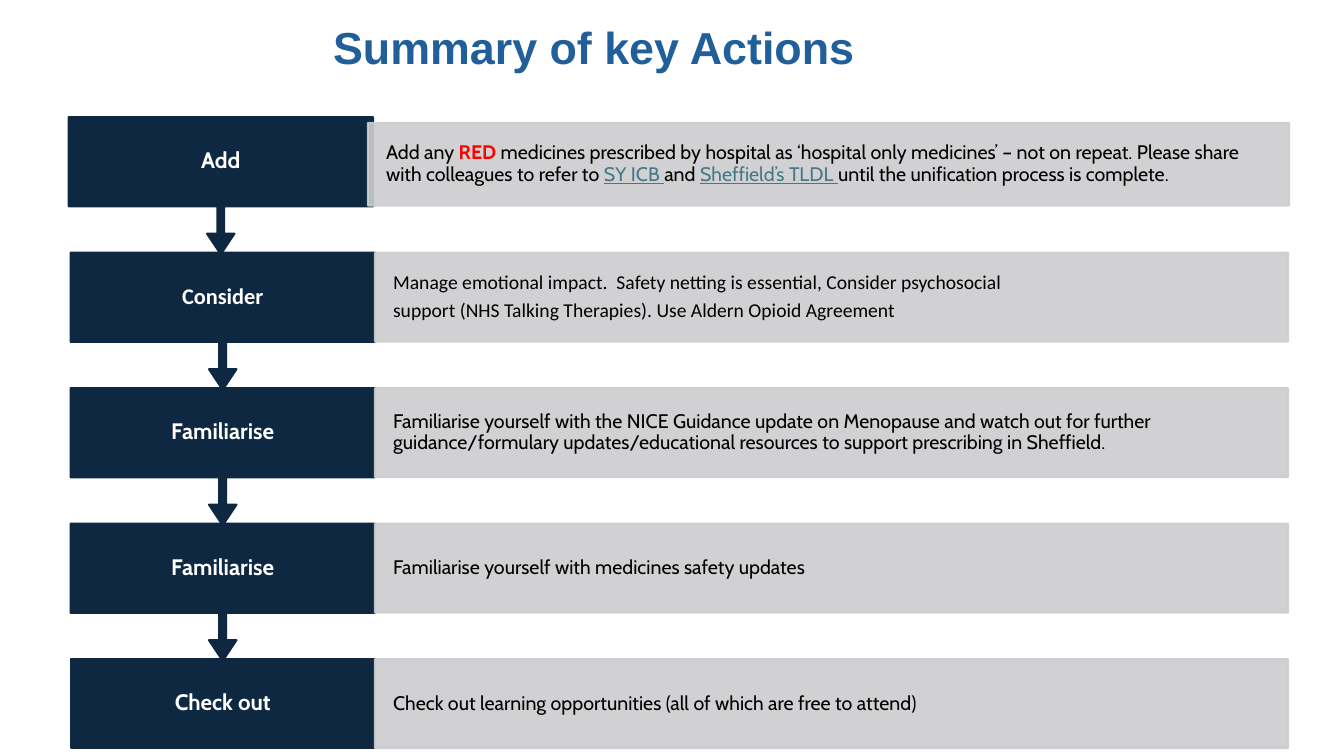
from lxml.etree import SubElement
from pptx import Presentation
from pptx.dml.color import RGBColor
from pptx.enum.shapes import MSO_SHAPE
from pptx.enum.text import MSO_ANCHOR, PP_ALIGN
from pptx.oxml.ns import qn
from pptx.util import Pt

COLORS = {"navy": "0E2841", "grey": "CCCDCF", "white": "FFFFFF", "black": "000000",
          "red": "FF0000", "link": "467886", "title": "215F9A"}

# Row geometry
TOP, PITCH, ROW_H, CALLOUT_H = 83.7, 96.8, 63.4, 97.9
LABEL_X, LABEL_W, BODY_X, BODY_W = 50.4, 217.4, 267.8, 652.3

# Label, font, paragraphs made of (text, style) runs
ACTIONS = [
    ("Add", "Cabin", [[
        ("Add any ", None), ("RED ", "alert"),
        ("medicines prescribed by hospital as ‘hospital only medicines’ – not on repeat. "
         "Please share with colleagues to refer to ", None),
        ("SY ICB ", "link"), ("and ", None), ("Sheffield’s TLDL ", "link"),
        ("until the unification process is complete.", None)]]),
    ("Consider", "Calibri", [
        [("Manage emotional impact.  Safety netting is essential, Consider psychosocial", None)],
        [("support (NHS Talking Therapies). Use Aldern Opioid Agreement", None)]]),
    ("Familiarise", "Cabin", [[
        ("Familiarise yourself with the NICE Guidance update on Menopause and watch out for "
         "further guidance/formulary updates/educational resources to support prescribing "
         "in Sheffield.", None)]]),
    ("Familiarise", "Cabin", [[("Familiarise yourself with medicines safety updates", None)]]),
    ("Check out", "Cabin", [[
        ("Check out learning opportunities (all of which are free to attend)", None)]]),
]


def rgb(name):
    return RGBColor.from_string(COLORS[name])


class ActionSlide:
    def __init__(self, prs):
        self.slide = prs.slides.add_slide(prs.slide_layouts[5])

    def title(self, text, x, y, w, h):
        sp = self.slide.shapes.title
        sp.left, sp.top, sp.width, sp.height = Pt(x), Pt(y), Pt(w), Pt(h)
        tf = sp.text_frame
        tf.vertical_anchor = MSO_ANCHOR.TOP
        p = tf.paragraphs[0]
        p.text = text
        p.alignment = PP_ALIGN.CENTER
        p.line_spacing = Pt(40)
        self.font(p, "Arial", 32, "title", True)

    def font(self, p, name, size, color, bold=False):
        p.font.name, p.font.size, p.font.bold = name, Pt(size), bold
        p.font.color.rgb = rgb(color)

    def box(self, kind, x, y, w, h, color, inset_x, inset_y):
        sp = self.slide.shapes.add_shape(kind, Pt(x), Pt(y), Pt(w), Pt(h))
        sp.shadow.inherit = False
        sp.fill.solid()
        sp.fill.fore_color.rgb = rgb(color)
        sp.line.color.rgb = rgb(color)
        sp.line.width = Pt(1.5)
        tf = sp.text_frame
        tf.word_wrap = True
        tf.vertical_anchor = MSO_ANCHOR.MIDDLE
        tf.margin_left = tf.margin_right = Pt(inset_x)
        tf.margin_top = tf.margin_bottom = Pt(inset_y)
        return sp

    def paragraph(self, p, align):
        p.alignment = align
        p.line_spacing = 0.9
        p.space_after = Pt(5)

    def label(self, text, font, x, y, arrow):
        kind = MSO_SHAPE.DOWN_ARROW_CALLOUT if arrow else MSO_SHAPE.RECTANGLE
        sp = self.box(kind, x, y, LABEL_W, CALLOUT_H if arrow else ROW_H, "navy", 15, 8.6)
        if arrow:
            for i, value in enumerate((0.05, 0.1, 0.15, 0.65)):
                sp.adjustments[i] = value
        p = sp.text_frame.paragraphs[0]
        p.text = text
        self.paragraph(p, PP_ALIGN.CENTER)
        self.font(p, font, 16, "white", True)

    def body(self, paragraphs, font, x, y, w, h):
        sp = self.box(MSO_SHAPE.RECTANGLE, x, y, w, h, "grey", 13, 13.5)
        # 90% opacity on fill and outline
        for clr in sp._element.spPr.iter(qn("a:srgbClr")):
            SubElement(clr, qn("a:alpha"), val="90000")
        tf = sp.text_frame
        for i, runs in enumerate(paragraphs):
            p = tf.add_paragraph() if i else tf.paragraphs[0]
            self.paragraph(p, PP_ALIGN.LEFT)
            self.font(p, font, 14, "black")
            for text, style in runs:
                r = p.add_run()
                r.text = text
                r.font.name, r.font.size = font, Pt(14)
                r.font.bold = style == "alert"
                r.font.underline = style == "link"
                r.font.color.rgb = rgb({"alert": "red", "link": "link"}.get(style, "black"))


def main():
    prs = Presentation()
    prs.slide_width, prs.slide_height = Pt(960), Pt(540)
    s = ActionSlide(prs)
    s.title("Summary of key Actions ", 104.4, 8.6, 648.7, 53.3)

    # Rows from the bottom up, so each arrow overlaps the box below it
    last = len(ACTIONS) - 1
    for i, (label, font, paragraphs) in reversed(list(enumerate(ACTIONS))):
        y = TOP + i * PITCH
        s.label(label, font, LABEL_X if i else 49, y, arrow=i < last)
        # The first description is slightly wider and lower
        area = (BODY_X, y, BODY_W, ROW_H) if i else (262.8, 87.8, 658.1, 59)
        s.body(paragraphs, font, *area)

    prs.save("out.pptx")


if __name__ == "__main__":
    main()
